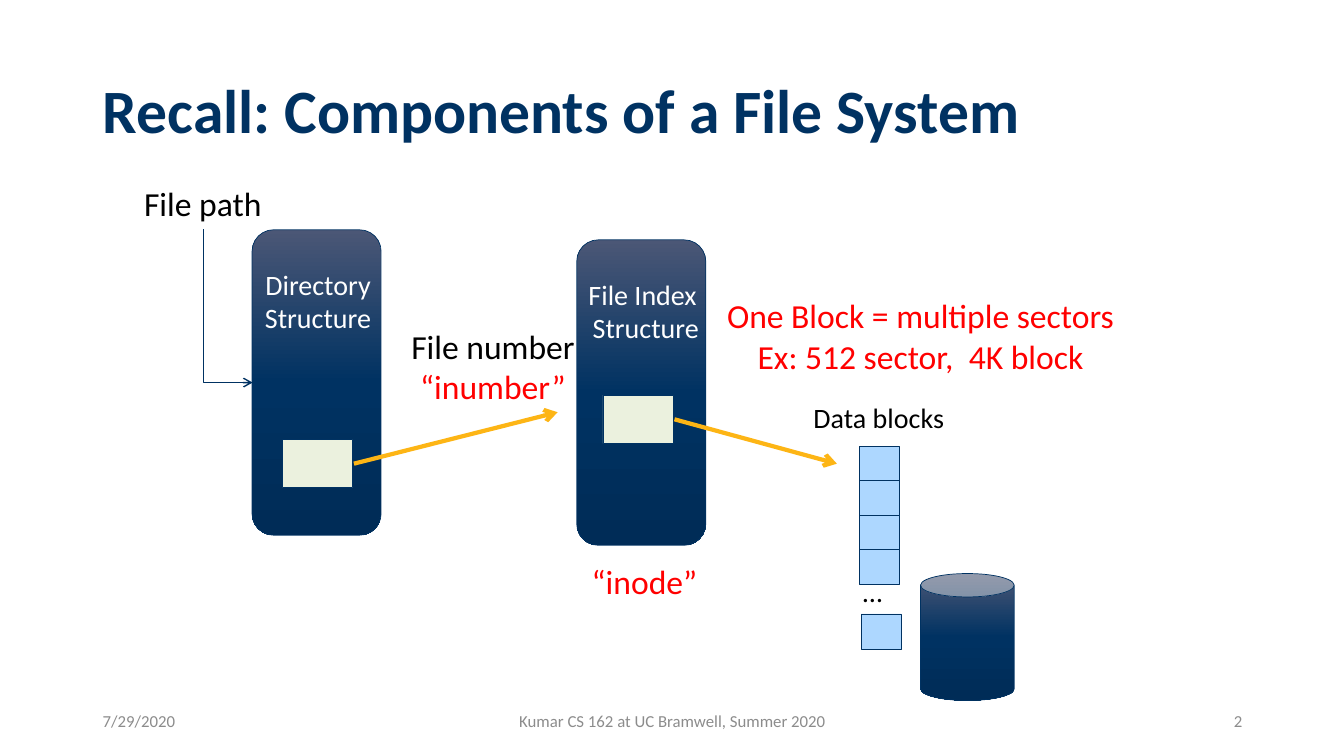
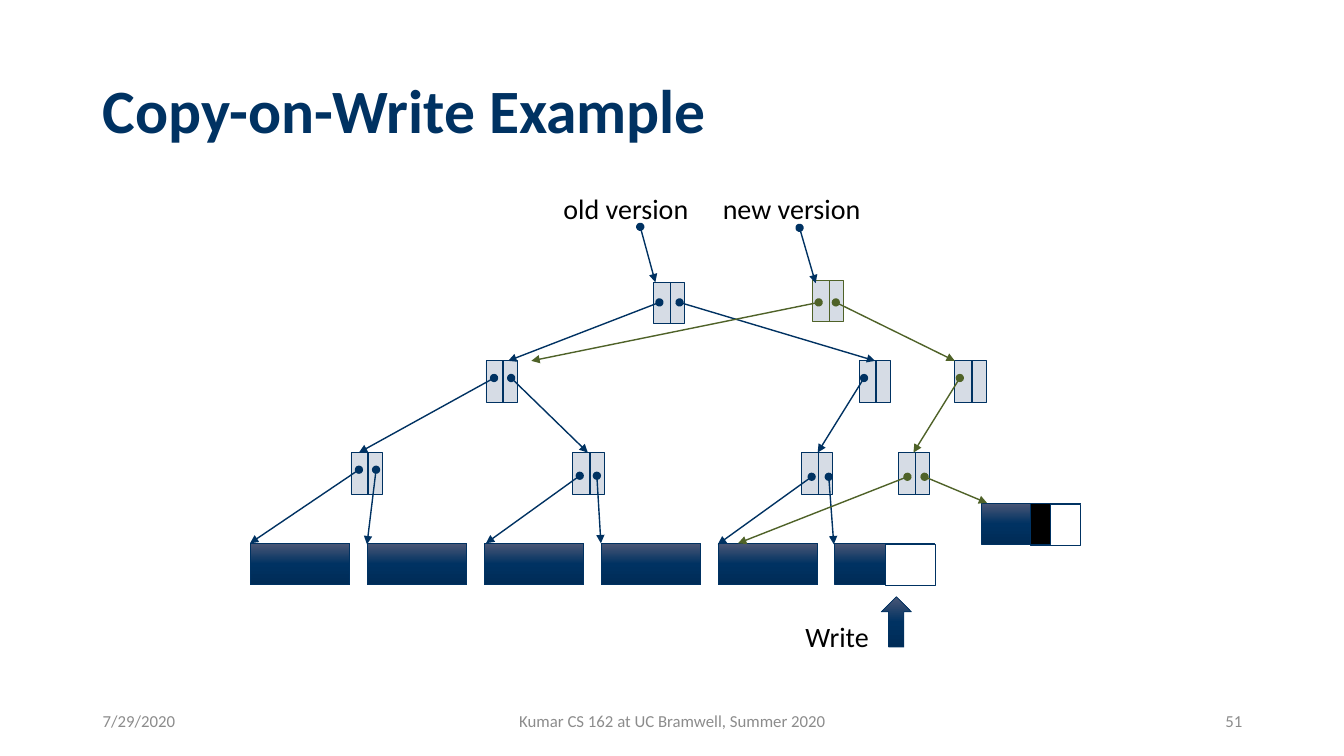
from dataclasses import dataclass

from lxml import etree
from pptx import Presentation
from pptx.dml.color import RGBColor
from pptx.enum import shapes, text
from pptx.oxml import ns
from pptx.util import Emu, Pt

SCALE = 9144


@dataclass(frozen=True)
class Theme:
    font: str = "Calibri"
    navy: str = "003262"
    gradient: tuple = ((0, "4B5776"), (50, "003262"), (100, "002C57"))
    gold: str = "FDB515"
    olive: str = "4F6228"
    cream: str = "EBF1DE"
    sky: str = "ADD7FF"
    mist: str = "D6DCE5"
    grey: str = "8C8C8C"
    red: str = "FF0000"
    black: str = "000000"
    white: str = "FFFFFF"
    title_size: int = 44
    large: int = 24
    medium: int = 20
    small: int = 12
    outline: float = 0.5
    thin: int = 1
    thick: int = 3


THEME = Theme()
KIND = shapes.MSO_SHAPE
LEFT, CENTER, RIGHT = (text.PP_ALIGN.LEFT, text.PP_ALIGN.CENTER, text.PP_ALIGN.RIGHT)

PAGE_SIZE = (1333, 750)
TITLE_BOX = (92, 40, 1150, 145)
FOOTER_TOP, FOOTER_HEIGHT = 695, 40
FOOTER_DATE = "7/29/2020"
FOOTER_COURSE = "Kumar CS 162 at UC Bramwell, Summer 2020"

STRUCTURES = [
    ((250, 228), (252, 260, 127, 77), ["Directory", "Structure"], (280, 436)),
    ((572, 238), (573, 270, 135, 77), ["File Index ", "Structure"], (598, 392)),
]
STRUCTURE_SIZE = (128, 303)
ENTRY_SIZE = (70, 48)
LOOKUPS = [((351, 460), (553, 409)), ((669, 416), (830, 460))]
FILE_PATH_ELBOW = ((302, 279), (150, 328))
DATA_BLOCKS = [(852, 443 + 34 * row) for row in range(4)] + [(854, 609)]
DATA_BLOCK_SIZE = (40, 35)
DISK = (913, 569, 93, 126)
COMPONENT_LABELS = [
    ((133, 177, 138, 50), ["File path"], THEME.large, THEME.black, LEFT),
    ((397, 318, 184, 50), ["File number"], THEME.large, THEME.black, CENTER),
    ((406, 358, 166, 50), ["“inumber”"], THEME.large, THEME.red, CENTER),
    ((846, 565, 39, 44), ["…"], THEME.medium, THEME.black, LEFT),
    ((797, 392, 154, 44), ["Data blocks"], THEME.medium, THEME.black, LEFT),
    ((577, 552, 125, 50), ["“inode”"], THEME.large, THEME.red, LEFT),
    ((702, 288, 422, 91), ["One Block = multiple sectors", "Ex: 512 sector,  4K block"],
     THEME.large, THEME.red, CENTER),
]

BLOCK_SIZE = (99, 41)
BLOCKS = [(248 + 116 * column, 539) for column in range(6)] + [(973, 499)]
BLOCK_PARTS = [
    ((878, 540, 50, 41), THEME.white),
    ((1022, 500, 50, 41), THEME.white),
    ((1022, 499, 20, 41), THEME.black),
]
WRITE_ARROW = (874, 592, 30, 50)
NODE_SIZE = (31, 41)
NODE_DIVIDER = 17
NODES = [
    ((648, 280), THEME.navy, THEME.navy, 20, [(6, (504, 358)), (26, (868, 358))]),
    ((806, 278), THEME.olive, THEME.olive, 22, [(6, (527, 358)), (23, (947, 358))]),
    ((482, 358), THEME.navy, THEME.navy, 17, [(8, (356, 449)), (25, (583, 449))]),
    ((852, 358), THEME.navy, THEME.navy, 17, [(5, (811, 449))]),
    ((947, 358), THEME.navy, THEME.olive, 17, [(5, (906, 449))]),
    ((348, 449), THEME.navy, THEME.navy, 17, [(8, (248, 539)), (25, (364, 540))]),
    ((568, 449), THEME.navy, THEME.navy, 23, [(7, (482, 539)), (24, (596, 539))]),
    ((795, 449), THEME.navy, THEME.navy, 24, [(10, (712, 540)), (27, (827, 540))]),
    ((891, 449), THEME.navy, THEME.olive, 24, [(9, (732, 539)), (26, (979, 499))]),
]
VERSION_POINTERS = [((635, 225), (650, 280)), ((793, 226), (809, 281))]
TREE_LABELS = [
    ((549, 185, 147, 44), "old version"),
    ((707, 185, 158, 44), "new version"),
    ((789, 610, 90, 44), "Write"),
]


def px(*lengths):
    return [Emu(length * SCALE) for length in lengths]


def rgb(value):
    return RGBColor.from_string(value)


def write(frame, lines, size, color, align=LEFT, bold=False):
    for index, line in enumerate(lines):
        para = frame.paragraphs[0] if index == 0 else frame.add_paragraph()
        para.alignment = align
        span = para.add_run()
        span.text = line
        span.font.name = THEME.font
        span.font.size = Pt(size)
        span.font.bold = bold
        span.font.color.rgb = rgb(color)


def add_label(page, place, lines, size, color, align=LEFT):
    frame = page.shapes.add_textbox(*px(*place)).text_frame
    frame.word_wrap = False
    frame.auto_size = text.MSO_AUTO_SIZE.SHAPE_TO_FIT_TEXT
    write(frame, lines, size, color, align)


def fill_gradient(shape):
    shape.fill.gradient()
    shape.fill.gradient_angle = 270
    stops = shape._element.spPr.find(ns.qn("a:gradFill")).find(ns.qn("a:gsLst"))
    for stop in list(stops):
        stops.remove(stop)
    for position, color in THEME.gradient:
        stop = etree.SubElement(stops, ns.qn("a:gs"), pos=str(position * 1000))
        etree.SubElement(stop, ns.qn("a:srgbClr"), val=color)


def add_box(page, place, fill=None, kind=KIND.RECTANGLE, line=THEME.navy):
    box = page.shapes.add_shape(kind, *px(*place))
    box.shadow.inherit = False
    if fill:
        box.fill.solid()
        box.fill.fore_color.rgb = rgb(fill)
    else:
        fill_gradient(box)
    box.line.color.rgb = rgb(line)
    box.line.width = Pt(THEME.outline)


def add_line(page, start, end, color=THEME.navy, width=THEME.thin, head=None, tail=None,
             kind=shapes.MSO_CONNECTOR.STRAIGHT):
    line = page.shapes.add_connector(kind, *px(*start, *end))
    line.line.color.rgb = rgb(color)
    line.line.width = Pt(width)
    outline = line.line._get_or_add_ln()
    for tag, ending in (("a:headEnd", head), ("a:tailEnd", tail)):
        if ending:
            etree.SubElement(outline, ns.qn(tag), type=ending)
    etree.SubElement(line._element.spPr, ns.qn("a:effectLst"))
    return line


def add_pointer(page, start, end, color=THEME.navy):
    add_line(page, start, end, color, head="oval", tail="triangle")


def add_page(deck, title, number):
    page = deck.slides.add_slide(deck.slide_layouts[5])
    heading = page.shapes.title
    heading.left, heading.top, heading.width, heading.height = px(*TITLE_BOX)
    frame = heading.text_frame
    frame.auto_size = text.MSO_AUTO_SIZE.NONE
    frame.vertical_anchor = text.MSO_ANCHOR.MIDDLE
    write(frame, [title], THEME.title_size, THEME.navy, bold=True)
    frame.paragraphs[0].line_spacing = 0.9
    footers = [(92, 300, FOOTER_DATE, LEFT), (442, 450, FOOTER_COURSE, CENTER),
               (942, 300, str(number), RIGHT)]
    for left, width, words, align in footers:
        place = px(left, FOOTER_TOP, width, FOOTER_HEIGHT)
        frame = page.shapes.add_textbox(*place).text_frame
        frame.word_wrap = True
        frame.vertical_anchor = text.MSO_ANCHOR.MIDDLE
        write(frame, [words], THEME.small, THEME.grey, align)
    return page


def build_components(deck):
    page = add_page(deck, "Recall: Components of a File System", 2)
    for corner, label_place, lines, entry in STRUCTURES:
        add_box(page, corner + STRUCTURE_SIZE, kind=KIND.ROUNDED_RECTANGLE)
        add_label(page, label_place, lines, THEME.medium, THEME.white, CENTER)
        add_box(page, entry + ENTRY_SIZE, THEME.cream)
    elbow = add_line(page, *FILE_PATH_ELBOW, tail="arrow", kind=shapes.MSO_CONNECTOR.ELBOW)
    geometry = elbow._element.spPr
    geometry.find(ns.qn("a:prstGeom")).set("prst", "bentConnector2")
    geometry.find(ns.qn("a:xfrm")).set("rot", str(270 * 60000))
    for start, end in LOOKUPS:
        add_line(page, start, end, THEME.gold, THEME.thick, tail="arrow")
    add_box(page, DISK, kind=KIND.CAN)
    for corner in DATA_BLOCKS:
        add_box(page, corner + DATA_BLOCK_SIZE, THEME.sky)
    for label in COMPONENT_LABELS:
        add_label(page, *label)


def build_copy_on_write(deck):
    page = add_page(deck, "Copy-on-Write Example", 51)
    for corner in BLOCKS:
        add_box(page, corner + BLOCK_SIZE)
    for place, fill in BLOCK_PARTS:
        add_box(page, place, fill)
    add_box(page, WRITE_ARROW, kind=KIND.UP_ARROW)
    for (left, top), outline, *_ in NODES:
        add_box(page, (left, top) + NODE_SIZE, THEME.mist, line=outline)
        middle = left + NODE_DIVIDER
        add_line(page, (middle, top), (middle, top + NODE_SIZE[1]), outline)
    for (left, top), _, color, drop, pointers in NODES:
        for offset, target in pointers:
            add_pointer(page, (left + offset, top + drop), target, color)
    for start, end in VERSION_POINTERS:
        add_pointer(page, start, end)
    for place, words in TREE_LABELS:
        add_label(page, place, [words], THEME.medium, THEME.black)


def main():
    deck = Presentation()
    deck.slide_width, deck.slide_height = px(*PAGE_SIZE)
    build_components(deck)
    build_copy_on_write(deck)
    deck.save("out.pptx")


if __name__ == "__main__":
    main()
